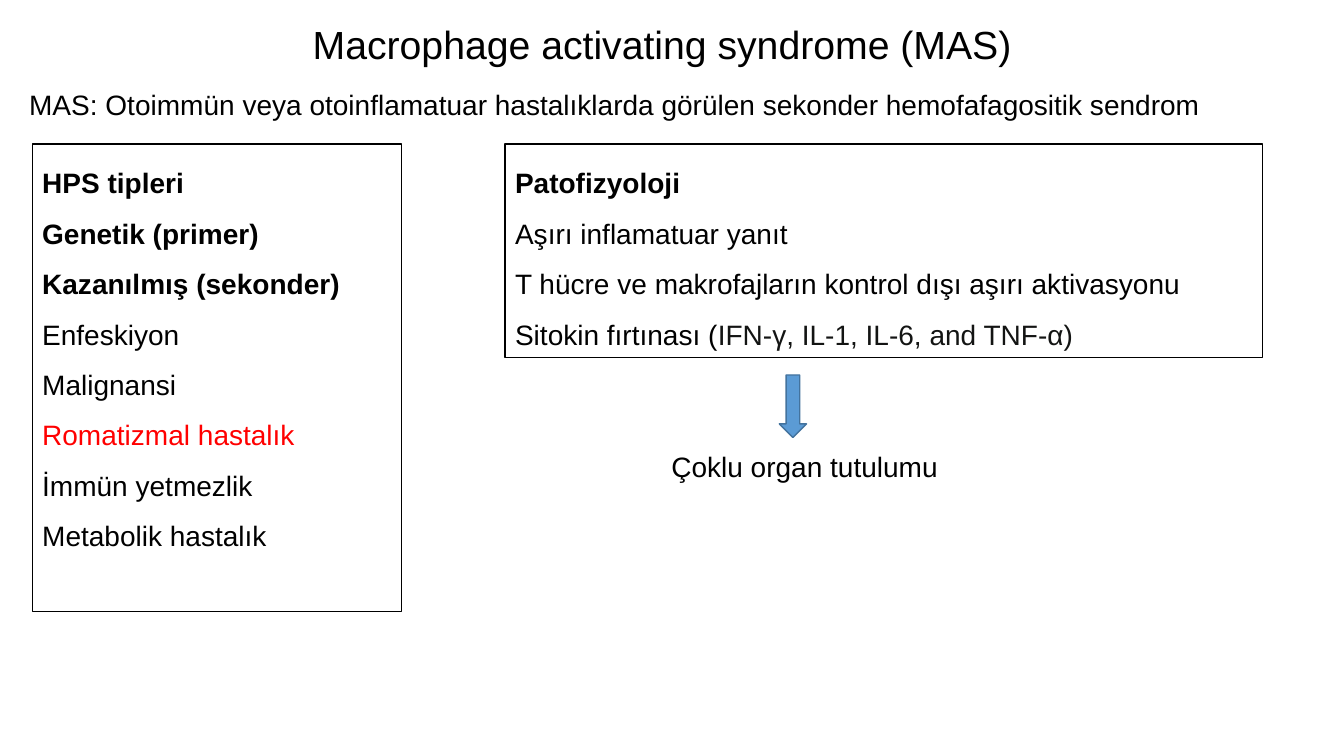
from pptx import Presentation
from pptx.dml.color import RGBColor
from pptx.enum.shapes import MSO_SHAPE
from pptx.enum.text import MSO_ANCHOR, PP_ALIGN
from pptx.util import Inches, Pt

THEME = {
    "font": "Arial", "title": 28, "body": 20, "line": 1,
    "text": "000000", "accent": "FF0000", "soft": "131413",
    "paper": "FFFFFF", "arrow": "5B9BD5", "arrow_line": "43739E",
}

TITLE = "Macrophage activating syndrome (MAS)"
DEFINITION = "MAS: Otoimmün veya otoinflamatuar hastalıklarda görülen sekonder hemofafagositik sendrom"
OUTCOME = "Çoklu organ tutulumu"

HPS_TYPES = [
    ("bold", [("HPS tipleri", "text")]),
    ("bold", [("Genetik (primer)", "text")]),
    ("bold", [("Kazanılmış (sekonder)", "text")]),
    ("plain", [("Enfeskiyon", "text")]),
    ("plain", [("Malignansi", "text")]),
    ("plain", [("Romatizmal hastalık", "accent")]),
    ("plain", [("İmmün yetmezlik", "text")]),
    ("plain", [("Metabolik hastalık", "text")]),
]
PATHOPHYSIOLOGY = [
    ("bold", [("Patofizyoloji", "text")]),
    ("plain", [("Aşırı inflamatuar yanıt", "text")]),
    ("plain", [("T hücre ve makrofajların kontrol dışı aşırı aktivasyonu", "text")]),
    ("plain", [("Sitokin fırtınası (", "text"), ("IFN-γ, IL-1, IL-6, and TNF-α)", "soft")]),
]

MARGIN = 0.19
PANEL_TOP = 1.43
LABELS = [
    (TITLE, (MARGIN, 0.15, 12.75, 0.57), "title", PP_ALIGN.CENTER),
    (DEFINITION, (MARGIN, 0.82, 13.25, 0.44), "body", PP_ALIGN.LEFT),
    (OUTCOME, (6.56, 4.41, 3.63, 0.44), "body", PP_ALIGN.LEFT),
]
PANELS = [
    (HPS_TYPES, (0.32, PANEL_TOP, 3.66, 4.64)),
    (PATHOPHYSIOLOGY, (5.01, PANEL_TOP, 7.51, 2.12)),
]
ARROW_BOX = (7.73, 3.72, 0.27, 0.62)


def color(name):
    return RGBColor.from_string(THEME[name])


def add_shape(s, kind, box, fill, line):
    sp = s.shapes.add_shape(kind, *map(Inches, box))
    sp.shadow.inherit = False
    sp.fill.solid()
    sp.fill.fore_color.rgb = color(fill)
    sp.line.color.rgb = color(line)
    sp.line.width = Pt(THEME["line"])
    return sp


def write(tf, lines, size, align, spacing):
    tf.word_wrap = True
    tf.vertical_anchor = MSO_ANCHOR.TOP
    for i, (weight, runs) in enumerate(lines):
        p = tf.add_paragraph() if i else tf.paragraphs[0]
        p.alignment = align
        p.line_spacing = spacing
        p.font.name = THEME["font"]
        p.font.size = Pt(THEME[size])
        p.font.bold = weight == "bold"
        for text, tint in runs:
            r = p.add_run()
            r.text = text
            r.font.color.rgb = color(tint)


def main():
    prs = Presentation()
    prs.slide_width, prs.slide_height = Inches(13.33), Inches(7.5)
    s = prs.slides.add_slide(prs.slide_layouts[6])

    for text, box, size, align in LABELS:
        sp = s.shapes.add_textbox(*map(Inches, box))
        write(sp.text_frame, [("plain", [(text, "text")])], size, align, 1.0)

    for lines, box in PANELS:
        sp = add_shape(s, MSO_SHAPE.RECTANGLE, box, "paper", "text")
        write(sp.text_frame, lines, "body", PP_ALIGN.LEFT, 1.5)

    add_shape(s, MSO_SHAPE.DOWN_ARROW, ARROW_BOX, "arrow", "arrow_line")
    prs.save("out.pptx")


if __name__ == "__main__":
    main()
